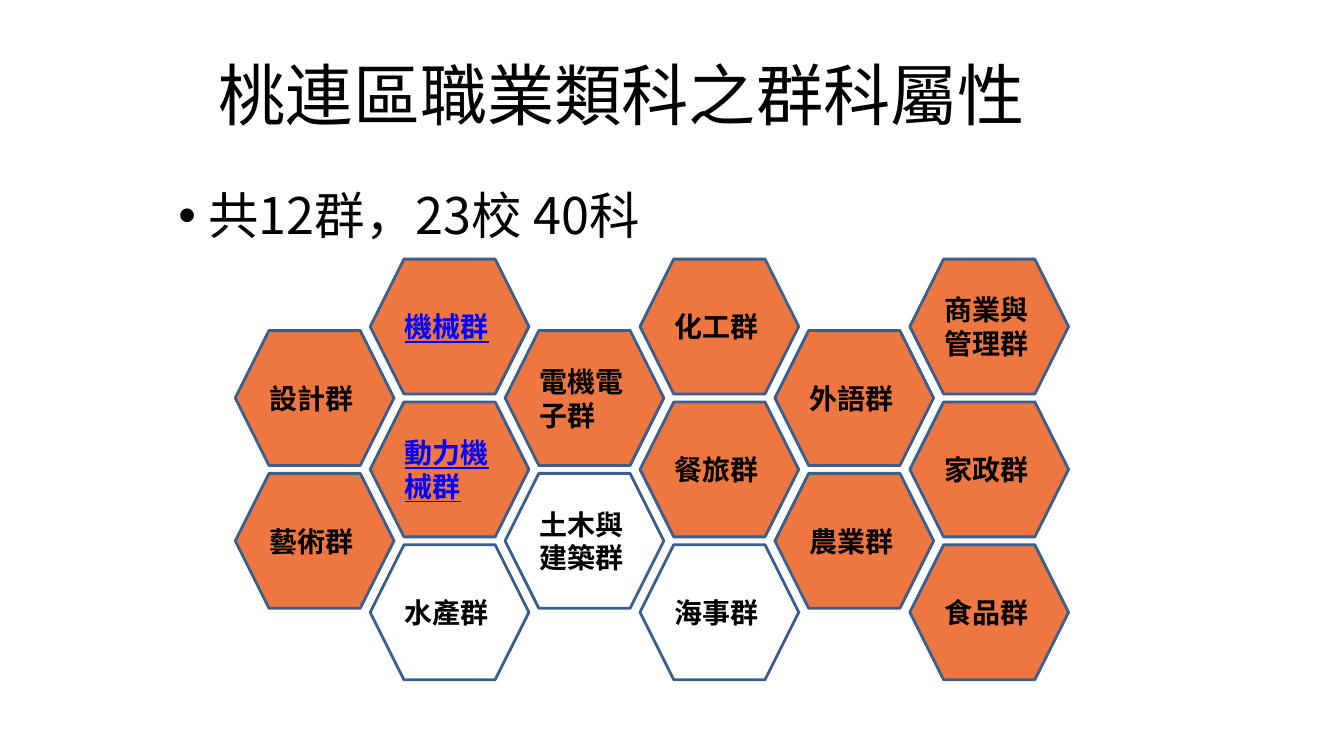
from lxml.etree import SubElement
from pptx import Presentation
from pptx.dml.color import RGBColor
from pptx.enum.shapes import MSO_SHAPE
from pptx.enum.text import MSO_ANCHOR, MSO_AUTO_SIZE, PP_ALIGN
from pptx.oxml.ns import qn
from pptx.util import Cm, Pt

LATIN, HAN = "Calibri", "Noto Sans CJK SC"
BLACK, BLUE, ORANGE, EDGE = "000000", "0000FF", "EE7640", "3A5F8C"

# Hexagon grid: rows count in half steps, so odd columns interlock
LEFT, TOP = 5.93, 6.53
STEP, HALF = 3.4, 1.8
WIDE, HIGH = 4.0, 3.4

# Each column: its first row, then its groups from top to bottom
COLUMNS = [
    (1, ["設計群", "藝術群"]),
    (0, ["機械群", "動力機械群", "水產群"]),
    (1, ["電機電子群", "土木與建築群"]),
    (0, ["化工群", "餐旅群", "海事群"]),
    (1, ["外語群", "農業群"]),
    (0, ["商業與管理群", "家政群", "食品群"]),
]
HOLLOW = {"土木與建築群", "水產群", "海事群"}
MARKED = {"機械群", "動力機械群"}


def color(code):
    return RGBColor.from_string(code)


class Deck:
    def __init__(self):
        self.show = Presentation()
        self.show.slide_width, self.show.slide_height = Cm(33.87), Cm(19.05)
        self.slide = self.show.slides.add_slide(self.show.slide_layouts[1])

    def label(self, shape, text, size, anchor, align, font=LATIN,
              ink=BLACK, bold=False, under=False):
        frame = shape.text_frame
        frame.text = text
        frame.word_wrap = True
        frame.auto_size = MSO_AUTO_SIZE.NONE
        frame.vertical_anchor = anchor
        para = frame.paragraphs[0]
        para.alignment = align
        para.space_before = Pt(0)
        for run in para.runs:
            face = run.font
            face.name, face.size = font, Pt(size)
            face.bold, face.underline = bold, under
            face.color.rgb = color(ink)
            SubElement(run._r.get_or_add_rPr(), qn("a:ea"), typeface=HAN)
        return para

    def place(self, shape, x, y, w, h):
        shape.left, shape.top = Cm(x), Cm(y)
        shape.width, shape.height = Cm(w), Cm(h)

    def title(self, text):
        shape = self.slide.shapes.title
        self.place(shape, 4.24, 0.76, 22.86, 3.18)
        self.label(shape, text, 48, MSO_ANCHOR.MIDDLE, PP_ALIGN.CENTER)

    def body(self, text):
        shape = self.slide.placeholders[1]
        self.place(shape, 4.24, 4.52, 22.6, 1.6)
        para = self.label(shape, text, 36, MSO_ANCHOR.TOP, PP_ALIGN.LEFT, HAN)
        props = para._p.get_or_add_pPr()
        props.set("marL", str(Cm(0.76)))
        props.set("indent", str(-Cm(0.76)))
        SubElement(props, qn("a:buChar"), char="•")

    def cell(self, text, col, row):
        shape = self.slide.shapes.add_shape(
            MSO_SHAPE.HEXAGON, Cm(LEFT + col * STEP), Cm(TOP + row * HALF),
            Cm(WIDE), Cm(HIGH))
        shape.shadow.inherit = False
        if text in HOLLOW:
            shape.fill.background()
        else:
            shape.fill.solid()
            shape.fill.fore_color.rgb = color(ORANGE)
        shape.line.color.rgb = color(EDGE)
        shape.line.width = Pt(2)
        mark = text in MARKED
        self.label(shape, text, 20, MSO_ANCHOR.MIDDLE, PP_ALIGN.LEFT,
                   ink=BLUE if mark else BLACK, bold=True, under=mark)


def main():
    deck = Deck()

    # Heading and summary
    deck.title("桃連區職業類科之群科屬性")
    deck.body("共12群，23校 40科")

    # Honeycomb of groups
    for col, (first, names) in enumerate(COLUMNS):
        for i, name in enumerate(names):
            deck.cell(name, col, first + 2 * i)

    deck.show.save("out.pptx")


if __name__ == "__main__":
    main()
